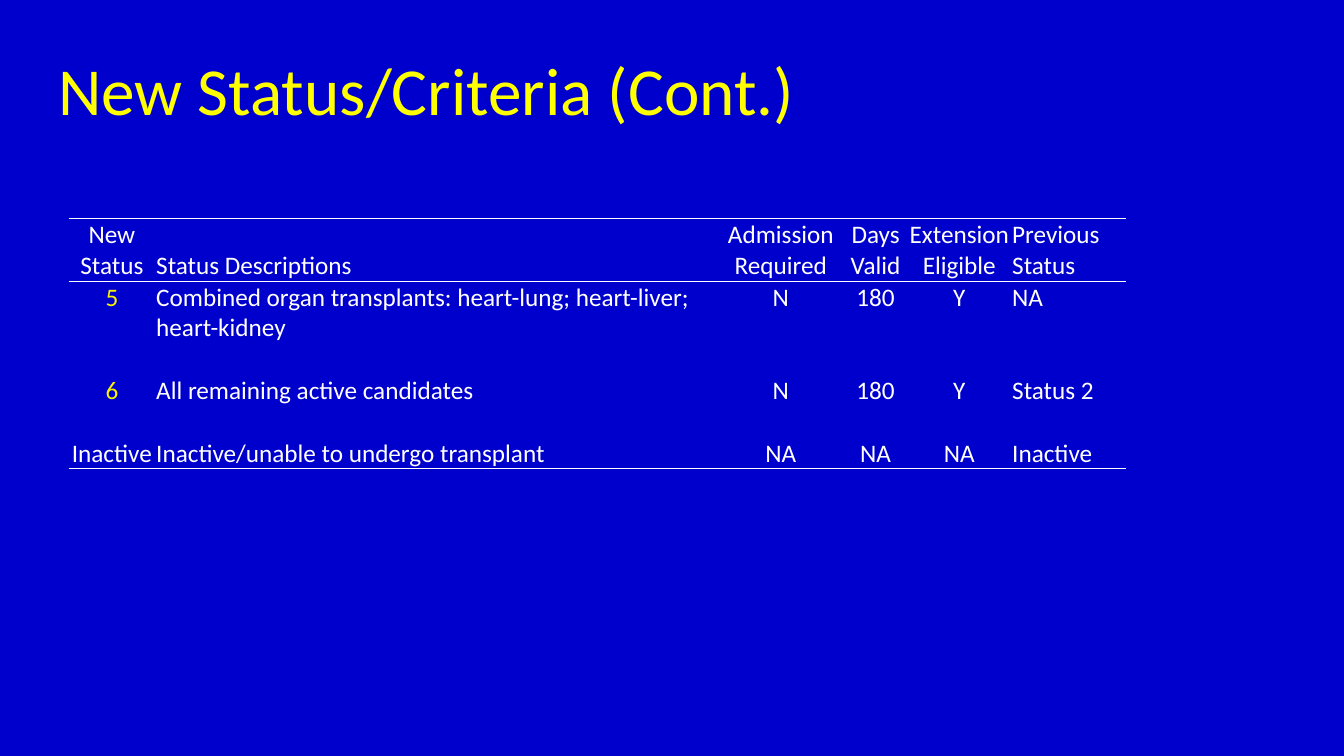
from dataclasses import dataclass

from lxml import etree
from pptx import Presentation
from pptx import util as u
from pptx.dml.color import RGBColor
from pptx.enum import text
from pptx.oxml import ns


@dataclass(frozen=True)
class Theme:
    font: str = "Calibri"
    background: str = "0000CC"
    title: str = "FFFF00"
    body: str = "FFFFFF"
    status: str = "F8F200"
    title_size: int = 48
    body_size: int = 18
    rule_width: int = 1


@dataclass(frozen=True)
class Column:
    width: float
    centred: bool


@dataclass(frozen=True)
class Row:
    height: float
    cells: tuple[str, ...] = ("",) * 6
    anchor: text.MSO_ANCHOR = text.MSO_ANCHOR.TOP
    first_color: str = Theme.body
    ruled_edges: str = ""


THEME = Theme()
LINE = 0.31
BOTTOM = text.MSO_ANCHOR.BOTTOM
COLUMNS = [
    Column(0.86, True),
    Column(5.58, False),
    Column(1.25, True),
    Column(0.63, True),
    Column(1.03, True),
    Column(1.14, False),
]
ROWS = [
    Row(
        2 * LINE,
        ("New\nStatus", "Status Descriptions", "Admission\nRequired",
         "Days\nValid", "Extension\nEligible", "Previous\nStatus"),
        anchor=BOTTOM,
        ruled_edges="TB",
    ),
    Row(
        2 * LINE,
        ("5", "Combined organ transplants: heart-lung; heart-liver; heart-kidney",
         "N", "180", "Y", "NA"),
        first_color=THEME.status,
        ruled_edges="T",
    ),
    Row(LINE),
    Row(
        LINE,
        ("6", "All remaining active candidates", "N", "180", "Y", "Status 2"),
        first_color=THEME.status,
    ),
    Row(LINE),
    Row(
        LINE,
        ("Inactive", "Inactive/unable to undergo transplant", "NA", "NA", "NA", "Inactive"),
        anchor=BOTTOM,
        ruled_edges="B",
    ),
]


def format_text(frame, size: int, color: str, alignment: text.PP_ALIGN) -> None:
    for para in frame.paragraphs:
        para.alignment = alignment
        for span in para.runs:
            span.font.name = THEME.font
            span.font.size = u.Pt(size)
            span.font.color.rgb = RGBColor.from_string(color)


def set_borders(cell, ruled_edges: str) -> None:
    properties = cell._tc.get_or_add_tcPr()
    for edge in "LRTB":
        border = etree.SubElement(properties, ns.qn(f"a:ln{edge}"))
        if edge in ruled_edges:
            border.set("w", str(u.Pt(THEME.rule_width)))
            fill = etree.SubElement(border, ns.qn("a:solidFill"))
            etree.SubElement(fill, ns.qn("a:srgbClr"), val=THEME.body)
        else:
            border.set("w", "0")
            etree.SubElement(border, ns.qn("a:noFill"))


def fill_cell(cell, row: Row, column: Column, wording: str, color: str) -> None:
    cell.margin_left = cell.margin_right = cell.margin_top = u.Inches(0.01)
    cell.margin_bottom = 0
    cell.vertical_anchor = row.anchor
    cell.text_frame.text = wording
    alignment = text.PP_ALIGN.CENTER if column.centred else text.PP_ALIGN.LEFT
    format_text(cell.text_frame, THEME.body_size, color, alignment)
    set_borders(cell, row.ruled_edges)
    cell.fill.background()


def add_title(page, wording: str) -> None:
    box = page.shapes.add_textbox(
        u.Inches(0.48), u.Inches(0.25), u.Inches(11.33), u.Inches(1.25)
    )
    frame = box.text_frame
    frame.word_wrap = True
    frame.vertical_anchor = text.MSO_ANCHOR.MIDDLE
    frame.text = wording
    format_text(frame, THEME.title_size, THEME.title, text.PP_ALIGN.LEFT)


def add_status_table(page) -> None:
    width = sum(column.width for column in COLUMNS)
    height = sum(row.height for row in ROWS)
    table = page.shapes.add_table(
        len(ROWS), len(COLUMNS),
        u.Inches(0.68), u.Inches(2.17), u.Inches(width), u.Inches(height),
    ).table
    table.first_row = False
    table.horz_banding = False
    for index, column in enumerate(COLUMNS):
        table.columns[index].width = u.Inches(column.width)
    for row_index, row in enumerate(ROWS):
        table.rows[row_index].height = u.Inches(row.height)
        for index, (column, wording) in enumerate(zip(COLUMNS, row.cells)):
            color = row.first_color if index == 0 else THEME.body
            fill_cell(table.cell(row_index, index), row, column, wording, color)


def main() -> None:
    deck = Presentation()
    deck.slide_width = u.Inches(13.33)
    deck.slide_height = u.Inches(7.5)
    page = deck.slides.add_slide(deck.slide_layouts[6])
    background = page.background.fill
    background.solid()
    background.fore_color.rgb = RGBColor.from_string(THEME.background)
    add_title(page, "New Status/Criteria (Cont.)")
    add_status_table(page)
    deck.save("out.pptx")


if __name__ == "__main__":
    main()
